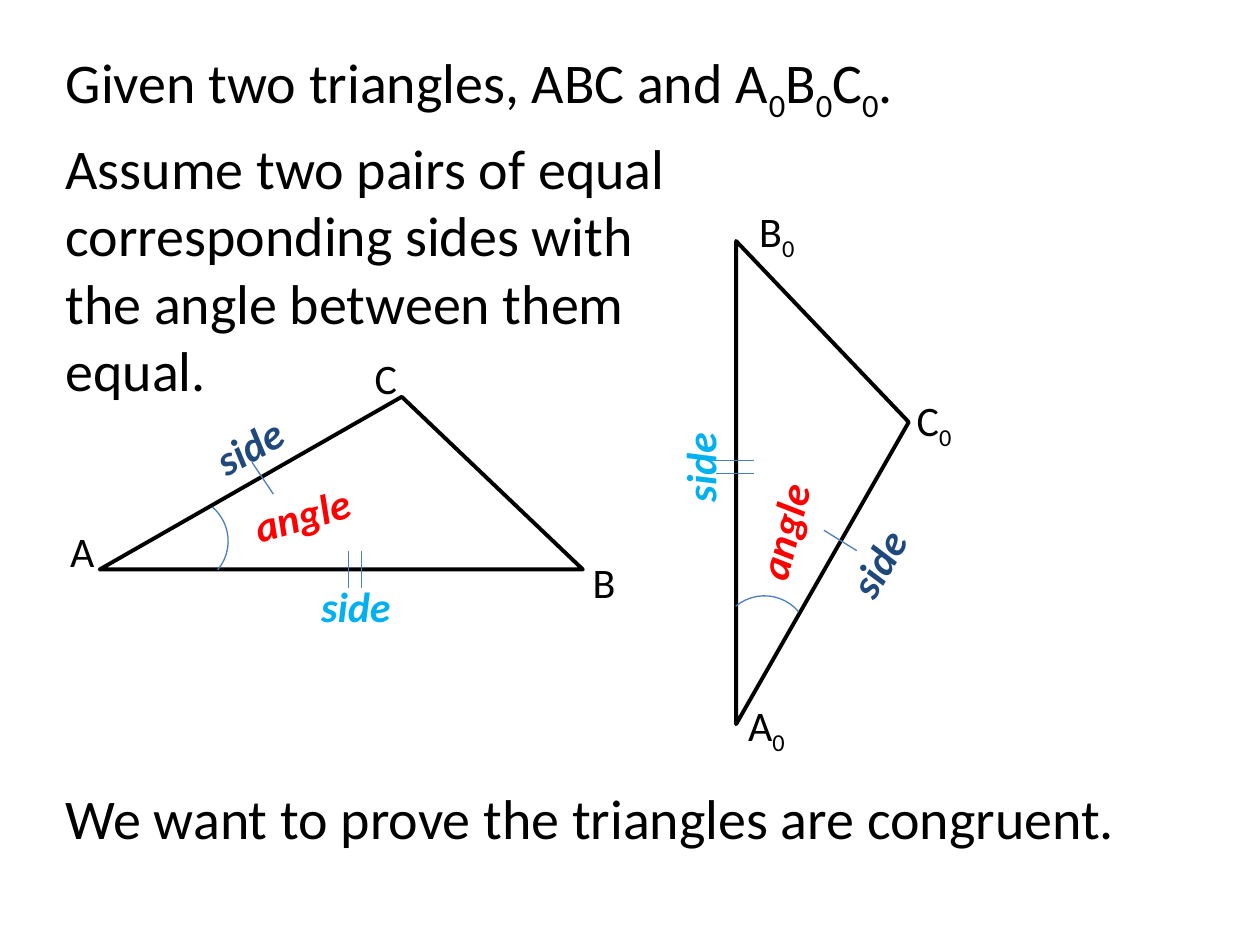
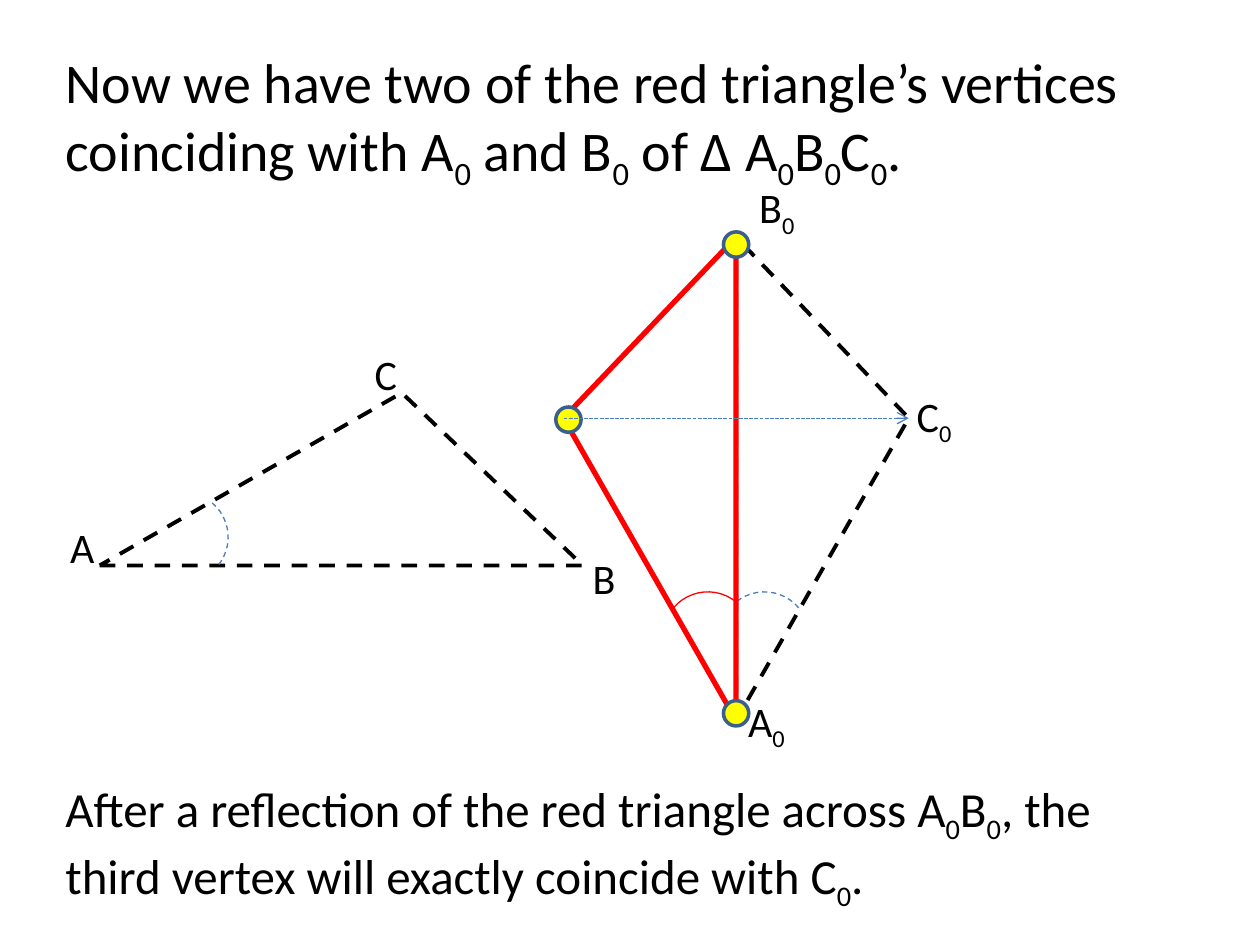
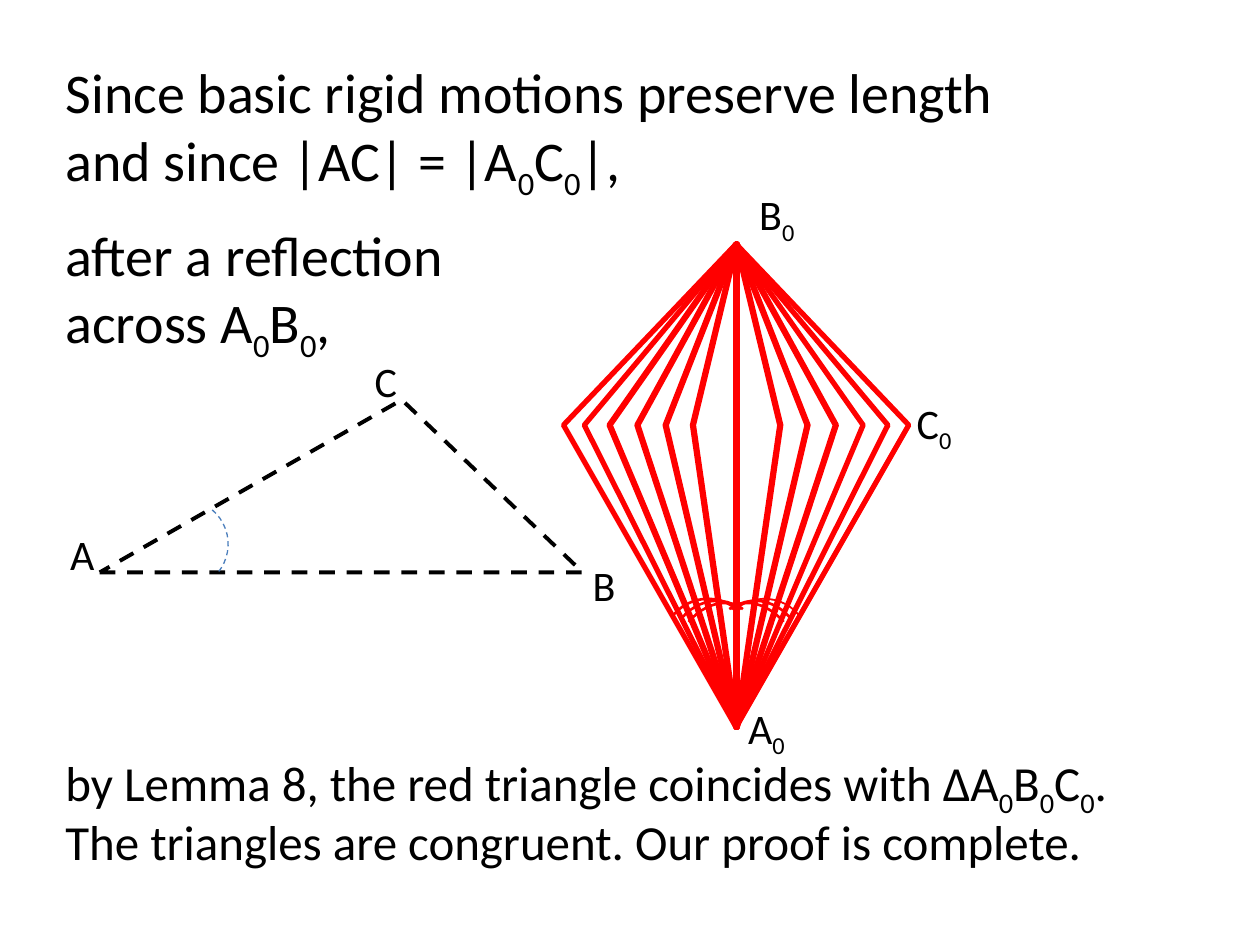
from lxml import etree
from pptx import Presentation
from pptx import util as u
from pptx.dml.color import RGBColor
from pptx.enum import dml, shapes, text
from pptx.oxml.ns import qn

BLACK = RGBColor(0x00, 0x00, 0x00)
RED = RGBColor(0xFF, 0x00, 0x00)
BLUE = RGBColor(0x4B, 0x7E, 0xBC)
NAVY = RGBColor(0x1F, 0x49, 0x7D)
SKY = RGBColor(0x00, 0xB0, 0xF0)
YELLOW = RGBColor(0xFF, 0xFF, 0x00)
DOT_EDGE = RGBColor(0x3A, 0x5F, 0x8C)
DASH = dml.MSO_LINE.DASH
FONT = "Calibri"

# All lengths are in centimetres; "_0" marks a subscript zero.
MARGIN, TEXT_WIDTH = 1.07, 22.86
TITLES = [
    ("Given two triangles, ABC and A_0B_0C_0.", 0.84, 1.63),
    ("Now we have two of the red triangle’s vertices coinciding with "
     "A_0 and B_0 of Δ A_0B_0C_0.", 0.84, 3.0),
    ("Since basic rigid motions preserve length\nand since |AC| = |A_0C_0|,", 1.04, 3.0),
]
# text, top, width, height, size
STATEMENTS = [
    [("Assume two pairs of equal corresponding sides with the angle between them equal.",
      2.57, 13.34, 5.74, 32),
     ("We want to prove the triangles are congruent.", 15.67, TEXT_WIDTH, 1.63, 32)],
    [("After a reflection of the red triangle across A_0B_0, the third vertex "
      "will exactly coincide with C_0.", 15.57, TEXT_WIDTH, 2.64, 28)],
    [("after a reflection\nacross A_0B_0,", 4.32, 14.35, 3.0, 32),
     ("by Lemma 8, the red triangle coincides with ΔA_0B_0C_0.", 15.04, TEXT_WIDTH, 1.45, 28),
     ("The triangles are congruent. Our proof is complete.", 16.23, TEXT_WIDTH, 1.45, 28)],
]
DROPS = [0, -0.08, 0.06]        # vertical shift of the drawing on each slide

BASE, FOOT, HEIGHT = 9.74, 6.09, 3.48   # AB, distance from A to the foot of C, height of C
A, A0 = (2.01, 11.48), (14.84, 14.6)
LABEL_SIZE = (1.9, 1.27)
LABELS = [("A", 0.71, 10.46), ("B", 11.23, 11.1), ("C", 6.83, 6.99),
          ("A_0", 14.5, 13.97), ("C_0", 17.88, 7.82)]
B0_LEFT, B0_TOP, B0_TOP_RAISED = 14.71, 4.01, 3.62

ARC_SIZE, ARC_ALONG, ARC_ASIDE, ARC_TURN = 1.8, 1.69, 0.57, 39.9

WORD_SIZE = (4.95, 1.27)
WORDS = [("side", 2.54, 8.36, 330.4, NAVY), ("side", 4.7, 11.58, 0, SKY),
         ("angle", 3.61, 9.73, 344, RED), ("angle", 13.31, 10.08, 284.3, RED),
         ("side", 11.63, 8.79, 270, SKY), ("side", 15.21, 10.72, 300, NAVY)]
TICKS = [((5.08, 9.32), (5.51, 9.96)), ((16.61, 10.69), (17.27, 11.1))]
DOUBLE_TICK = 0.26              # gap between the two strokes of a double tick

DOT = 0.51
DOTS = [(14.84, 4.93), (14.84, 14.38), (11.46, 8.46)]

# half width, strokes on the left and on the right
FAN = [(3.48, 1, 1), (3.06, 1, 1), (2.56, 2, 1), (2.0, 2, 2), (1.43, 2, 2), (0.88, 2, 2)]
STROKE_SHIFT = 0.02
# distance of the arc from the axis, arc height, line width left and right
FAN_ARCS = [(0.57, 1.8, 1.5, 1), (0.48, 1.6, 1.5, 1.5), (0.44, 1.35, 1.5, 1.5)]


def cm(*values):
    return [u.Cm(value) for value in values]


def style_line(shape, color, width, dash=None):
    shape.line.color.rgb = color
    shape.line.width = u.Pt(width)
    if dash:
        shape.line.dash_style = dash


def write(box, words, size, color=BLACK, emphasis=False, align=text.PP_ALIGN.LEFT):
    """Fill the box run by run, lowering each zero that follows an underscore."""
    frame = box.text_frame
    frame.word_wrap = True
    frame.auto_size = text.MSO_AUTO_SIZE.SHAPE_TO_FIT_TEXT
    frame.vertical_anchor = text.MSO_ANCHOR.TOP
    para = frame.paragraphs[0]
    para.alignment = align

    def add_span(content, lowered=False):
        span = para.add_run()
        span.text = content
        font = span.font
        font.name, font.size, font.color.rgb = FONT, u.Pt(size), color
        if emphasis:
            font.bold = font.italic = True
        if lowered:
            span._r.get_or_add_rPr().set("baseline", "-25000")

    for row, line in enumerate(words.split("\n")):
        if row:
            para.add_line_break()
        for index, part in enumerate(line.split("_0")):
            if index:
                add_span("0", lowered=True)
            if part:
                add_span(part)


def add_text(page, words, left, top, width, height, size, **style):
    box = page.shapes.add_textbox(*cm(left, top, width, height))
    write(box, words, size, **style)
    return box


def add_triangle(page, points, color, width, dash=None):
    start, *others = [tuple(cm(*point)) for point in points]
    builder = page.shapes.build_freeform(*start)
    builder.add_line_segments(others, close=True)
    triangle = builder.convert_to_shape()
    triangle.fill.background()
    triangle.shadow.inherit = False
    style_line(triangle, color, width, dash)


def add_arc(page, center, turn, color=BLUE, width=0.75, dash=None,
            height=ARC_SIZE, mirrored=False):
    x, y = center
    arc = page.shapes.add_shape(shapes.MSO_SHAPE.ARC, *cm(
        x - ARC_SIZE / 2, y - height / 2, ARC_SIZE, height))
    arc.rotation = turn
    if mirrored:
        arc._element.spPr.find(qn("a:xfrm")).set("flipH", "1")
    arc.fill.background()
    arc.shadow.inherit = False
    style_line(arc, color, width, dash)


def add_line(page, start, end, color=BLUE, width=0.75, dash=None, arrow=False):
    line = page.shapes.add_connector(shapes.MSO_CONNECTOR.STRAIGHT, *cm(*start, *end))
    style_line(line, color, width, dash)
    if arrow:
        etree.SubElement(line.line._get_or_add_ln(), qn("a:tailEnd"), type="arrow")
    etree.SubElement(line._element.spPr, qn("a:effectLst"))


def upright_triangle(drop, half_width, shift=0):
    """Corners A0, B0 and the outer vertex; a negative half width points left."""
    x, y = A0[0] + shift, A0[1] + drop
    return [(x, y), (x, y - BASE), (x + half_width, y - FOOT)]


def add_upright_arc(page, drop, side, aside=ARC_ASIDE, **style):
    """Angle mark at A0, on the right for side 1 and on the left for side -1."""
    center = (A0[0] + side * aside, A0[1] + drop - ARC_ALONG)
    turn = 90 - ARC_TURN if side > 0 else 270 + ARC_TURN
    add_arc(page, center, turn, mirrored=side > 0, **style)


def add_given_triangles(page, drop, b0_top, dash=None):
    x, y = A[0], A[1] + drop
    add_triangle(page, [(x, y), (x + BASE, y), (x + FOOT, y - HEIGHT)], BLACK, 2.25, dash)
    add_arc(page, (x + ARC_ALONG, y - ARC_ASIDE), ARC_TURN, dash=dash)
    add_triangle(page, upright_triangle(drop, HEIGHT), BLACK, 2.25, dash)
    add_upright_arc(page, drop, 1, dash=dash)
    for name, left, top in LABELS + [("B_0", B0_LEFT, b0_top)]:
        add_text(page, name, left, top + drop, *LABEL_SIZE, 24, align=text.PP_ALIGN.CENTER)


def add_equality_marks(page):
    for start, end in TICKS:
        add_line(page, start, end)
    for step in range(2):
        x, y = 7.03 + step * DOUBLE_TICK, 9.29 + step * DOUBLE_TICK
        add_line(page, (x, 11.1), (x, 11.86))
        add_line(page, (15.19, y), (14.43, y))
    for word, left, top, turn, color in WORDS:
        box = add_text(page, word, left, top, *WORD_SIZE, 24, color=color,
                       emphasis=True, align=text.PP_ALIGN.CENTER)
        box.rotation = turn


def add_reflection_start(page, drop):
    red = upright_triangle(drop, -HEIGHT)
    add_triangle(page, red, RED, 3)
    add_upright_arc(page, drop, -1, color=RED)
    for x, y in DOTS:
        dot = page.shapes.add_shape(shapes.MSO_SHAPE.OVAL, *cm(
            x - DOT / 2, y - DOT / 2, DOT, DOT))
        dot.fill.solid()
        dot.fill.fore_color.rgb = YELLOW
        dot.shadow.inherit = False
        style_line(dot, DOT_EDGE, 2)
    add_line(page, red[2], upright_triangle(drop, HEIGHT)[2],
             dash=dml.MSO_LINE.SQUARE_DOT, arrow=True)


def add_reflection_fan(page, drop):
    for half_width, left_strokes, right_strokes in FAN:
        for side, strokes in ((-1, left_strokes), (1, right_strokes)):
            for stroke in range(strokes):
                corners = upright_triangle(drop, side * half_width, stroke * STROKE_SHIFT)
                add_triangle(page, corners, RED, 3)
    for aside, height, left_width, right_width in FAN_ARCS:
        for side, width in ((-1, left_width), (1, right_width)):
            add_upright_arc(page, drop, side, aside, color=RED, width=width, height=height)
    foot, top, _ = upright_triangle(drop, 0)
    add_line(page, top, foot, RED, 3)


def add_page(deck, title, statements):
    page = deck.slides.add_slide(deck.slide_layouts[5])
    words, top, height = title
    box = page.shapes.title
    box.left, box.top, box.width, box.height = cm(MARGIN, top, TEXT_WIDTH, height)
    write(box, words, 32)
    for words, top, width, height, size in statements:
        add_text(page, words, MARGIN, top, width, height, size)
    return page


def main():
    deck = Presentation()
    deck.slide_width, deck.slide_height = cm(25.4, 19.05)
    given, start, fan = [add_page(deck, *content) for content in zip(TITLES, STATEMENTS)]

    add_given_triangles(given, DROPS[0], B0_TOP)
    add_equality_marks(given)

    add_given_triangles(start, DROPS[1], B0_TOP_RAISED, DASH)
    add_reflection_start(start, DROPS[1])

    add_given_triangles(fan, DROPS[2], B0_TOP_RAISED, DASH)
    add_reflection_fan(fan, DROPS[2])

    deck.save("out.pptx")


if __name__ == "__main__":
    main()
